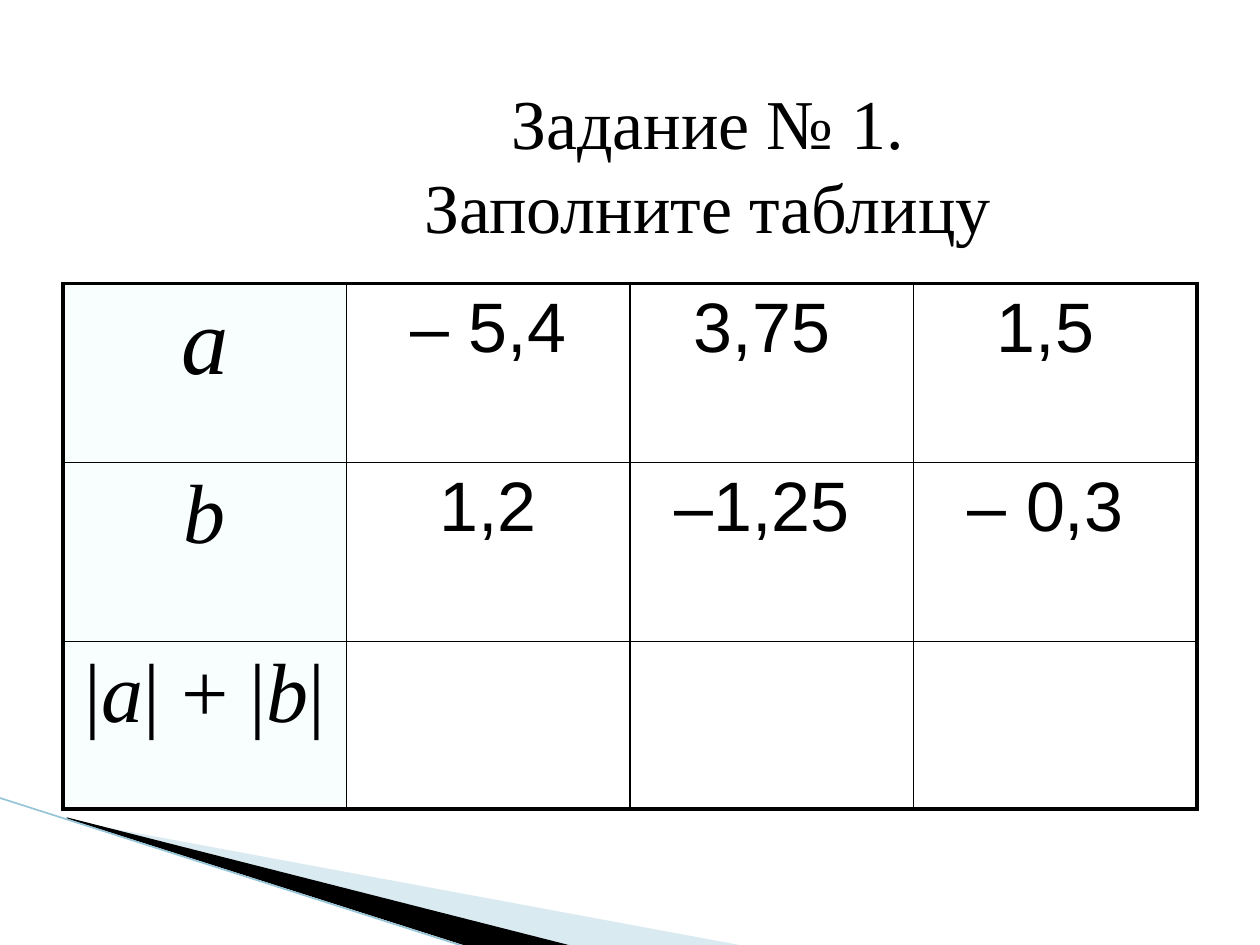
"""Build a slide with a task title, a table to fill in and a corner ribbon."""
from lxml.etree import SubElement
from pptx import Presentation
from pptx.dml.color import RGBColor
from pptx.enum.shapes import MSO_CONNECTOR as Connector
from pptx.enum.text import MSO_ANCHOR as Anchor, MSO_AUTO_SIZE as AutoSize, PP_ALIGN as Align
from pptx.oxml import parse_xml
from pptx.oxml.ns import nsdecls, qn
from pptx.util import Pt

TITLE = ["Задание № 1.", "Заполните таблицу"]
ROWS = [
    [[("а", "variable")], [("– 5,4", "number")], [("3,75 ", "number")], [("1,5 ", "number")]],
    [[("b", "label")], [("1,2", "number")], [("–1,25 ", "number")], [("– 0,3 ", "number")]],
    [[("|", "sign"), ("a", "label"), ("| + |", "sign"), ("b", "label"), ("|", "sign")], [], [], []],
]
RIBBONS = [
    ("pale", 40, [(39.6, 468.7), (428.4, 540.7), (328.3, 540.7), (39.6, 468)]),
    ("ink", 100, [(38.2, 467.3), (329, 540.7), (267.8, 541.4), (38.9, 468)]),
]
EDGE = (-0.7, 455.8, 267.1, 541.4)
TITLE_BOX = {"left": 233.3, "top": 41.8, "width": 342, "height": 104.4}
TABLE_BOX = (36, 162, 648, 300.24)
ROW_HEIGHTS = [102.24, 102.24, 95.76]

SERIF, SANS = "Times New Roman", "Arial"
THEME = {
    "colors": {"ink": "000000", "pale": "A0CBDC", "edge": "97C5D8", "header": "F8FDFE"},
    "fonts": {
        "title": {"name": SERIF, "size": Pt(40), "bold": False},
        "variable": {"name": SERIF, "size": Pt(54), "bold": False, "italic": True},
        "label": {"name": SERIF, "size": Pt(48), "bold": False, "italic": True},
        "sign": {"name": SERIF, "size": Pt(48), "bold": False, "italic": False},
        "number": {"name": SANS, "size": Pt(40), "bold": False, "italic": False},
    },
    "lines": {"outer": 2.25, "inner": 1, "edge": 0.95},
}


def color(name):
    return RGBColor.from_string(THEME["colors"][name])


def set_values(target, values):
    for name, value in values.items():
        setattr(target, name, value)


def add_runs(paragraph, runs):
    paragraph.alignment = Align.CENTER
    for text, style in runs:
        run = paragraph.add_run()
        run.text = text
        set_values(run.font, THEME["fonts"][style])
        run.font.color.rgb = color("ink")


def add_title(slide):
    title = slide.shapes.title
    set_values(title, {name: Pt(value) for name, value in TITLE_BOX.items()})
    frame = title.text_frame
    set_values(frame, {"word_wrap": False, "auto_size": AutoSize.NONE,
                       "vertical_anchor": Anchor.TOP})
    for index, text in enumerate(TITLE):
        paragraph = frame.add_paragraph() if index else frame.paragraphs[0]
        set_values(paragraph, {"line_spacing": Pt(48), "space_before": Pt(0)})
        add_runs(paragraph, [(text, "title")])


def add_ribbons(slide):
    for name, opacity, points in RIBBONS:
        builder = slide.shapes.build_freeform(*points[0], scale=Pt(1))
        builder.add_line_segments(points[1:], close=True)
        ribbon = builder.convert_to_shape()
        ribbon.shadow.inherit = False
        ribbon.line.fill.background()
        ribbon.fill.solid()
        ribbon.fill.fore_color.rgb = color(name)
        if opacity < 100:
            fill_color = ribbon.fill._xPr.find(qn("a:solidFill"))[0]
            SubElement(fill_color, qn("a:alpha"), val=str(opacity * 1000))
    edge = slide.shapes.add_connector(Connector.STRAIGHT, *map(Pt, EDGE))
    edge.line.color.rgb = color("edge")
    edge.line.width = Pt(THEME["lines"]["edge"])
    SubElement(edge._element.spPr, qn("a:effectLst"))


def set_borders(cell, outer_sides):
    properties = cell._tc.get_or_add_tcPr()
    for index, side in enumerate("LRTB"):
        width = Pt(THEME["lines"]["outer" if side in outer_sides else "inner"])
        properties.insert(index, parse_xml(
            f'<a:ln{side} {nsdecls("a")} w="{width}"><a:solidFill>'
            f'<a:srgbClr val="{THEME["colors"]["ink"]}"/></a:solidFill></a:ln{side}>'))


def add_table(slide):
    last_row, last_column = len(ROWS) - 1, len(ROWS[0]) - 1
    table = slide.shapes.add_table(len(ROWS), len(ROWS[0]), *map(Pt, TABLE_BOX)).table
    set_values(table, {"first_row": False, "horz_banding": False})
    for row, height in zip(table.rows, ROW_HEIGHTS):
        row.height = Pt(height)
    for r, row in enumerate(ROWS):
        for c, runs in enumerate(row):
            cell = table.cell(r, c)
            if c == 0:
                cell.fill.solid()
                cell.fill.fore_color.rgb = color("header")
            else:
                cell.fill.background()
            outer = {"L": c == 0, "R": c == last_column, "T": r == 0, "B": r == last_row}
            set_borders(cell, [side for side, is_outer in outer.items() if is_outer])
            add_runs(cell.text_frame.paragraphs[0], runs)


def main():
    presentation = Presentation()
    set_values(presentation, {"slide_width": Pt(720), "slide_height": Pt(540)})
    slide = presentation.slides.add_slide(presentation.slide_layouts[5])
    add_ribbons(slide)
    add_table(slide)
    add_title(slide)
    presentation.save("out.pptx")


if __name__ == "__main__":
    main()
